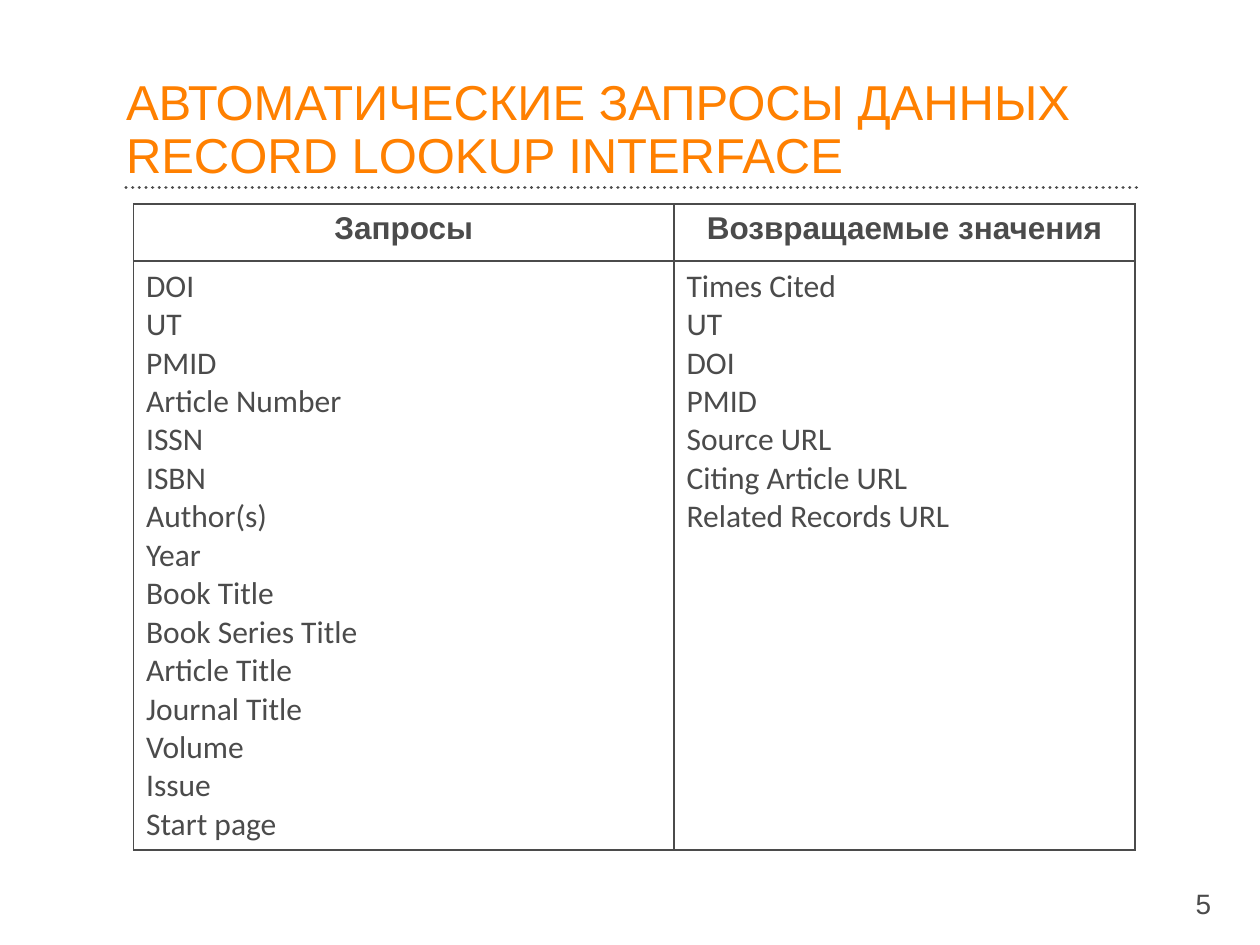
import dataclasses

import lxml.etree
import pptx
import pptx.dml.color
import pptx.enum.dml
import pptx.enum.shapes
import pptx.enum.text
import pptx.oxml.ns
import pptx.util

Inches = pptx.util.Inches
Pt = pptx.util.Pt
Align = pptx.enum.text.PP_ALIGN
qn = pptx.oxml.ns.qn

COLORS = {"title": "FF8000", "text": "4B4B4B", "cell": "FFFFFF"}
ROW_HEIGHTS = (0.45, 4.6)


@dataclasses.dataclass
class Column:
    heading: str
    width: float
    items: list[str]


COLUMNS = [
    Column("Запросы", 4.29, [
        "DOI", "UT", "PMID", "Article Number", "ISSN", "ISBN", "Author(s)",
        "Year", "Book Title", "Book Series Title", "Article Title",
        "Journal Title", "Volume", "Issue", "Start page",
    ]),
    Column("Возвращаемые значения", 3.66, [
        "Times Cited", "UT", "DOI", "PMID", "Source URL",
        "Citing Article URL", "Related Records URL",
    ]),
]


def color(name: str) -> pptx.dml.color.RGBColor:
    return pptx.dml.color.RGBColor.from_string(COLORS[name])


def write_lines(frame, lines: list[str], size: float, font: str = "Arial",
                ink: str = "text", bold: bool = False, align=Align.LEFT) -> None:
    for index, line in enumerate(lines):
        para = frame.paragraphs[0] if index == 0 else frame.add_paragraph()
        para.alignment = align
        span = para.add_run()
        span.text = line
        span.font.name = font
        span.font.size = Pt(size)
        span.font.bold = bold
        span.font.color.rgb = color(ink)


def style_cell(cell) -> None:
    properties = cell._tc.get_or_add_tcPr()
    for side in ("a:lnL", "a:lnR", "a:lnT", "a:lnB"):
        border = lxml.etree.SubElement(properties, qn(side), w=str(Pt(1)))
        fill = lxml.etree.SubElement(border, qn("a:solidFill"))
        lxml.etree.SubElement(fill, qn("a:srgbClr"), val=COLORS["text"])
    cell.fill.solid()
    cell.fill.fore_color.rgb = color("cell")


def add_title(page) -> None:
    title = page.shapes.title
    title.left, title.top = Inches(1), Inches(0.55)
    title.width, title.height = Inches(8.06), Inches(0.91)
    frame = title.text_frame
    frame.margin_left = frame.margin_right = 0
    frame.margin_top = frame.margin_bottom = 0
    frame.word_wrap = True
    frame.auto_size = pptx.enum.text.MSO_AUTO_SIZE.NONE
    frame.vertical_anchor = pptx.enum.text.MSO_ANCHOR.BOTTOM
    write_lines(frame, ["АВТОМАТИЧЕСКИЕ ЗАПРОСЫ ДАННЫХ RECORD LOOKUP INTERFACE"],
                28, ink="title")
    frame.paragraphs[0].line_spacing = 0.9


def add_title_rule(page) -> None:
    rule = page.shapes.add_connector(
        pptx.enum.shapes.MSO_CONNECTOR.STRAIGHT,
        Inches(1), Inches(1.49), Inches(9.06), Inches(1.49))
    rule.line.color.rgb = color("text")
    rule.line.width = Pt(1.9)
    rule.line.dash_style = pptx.enum.dml.MSO_LINE.ROUND_DOT
    properties = rule._element.spPr
    properties.find(qn("a:ln")).set("cap", "rnd")
    lxml.etree.SubElement(properties, qn("a:effectLst"))


def add_fields_table(page) -> None:
    table = page.shapes.add_table(
        len(ROW_HEIGHTS), len(COLUMNS), Inches(1.06), Inches(1.62),
        Inches(sum(column.width for column in COLUMNS)),
        Inches(sum(ROW_HEIGHTS))).table
    for row, height in zip(table.rows, ROW_HEIGHTS):
        row.height = Inches(height)
    for index, column in enumerate(COLUMNS):
        table.columns[index].width = Inches(column.width)
        heading, body = table.cell(0, index), table.cell(1, index)
        style_cell(heading)
        style_cell(body)
        write_lines(heading.text_frame, [column.heading], 18,
                    bold=True, align=Align.CENTER)
        write_lines(body.text_frame, column.items, 18, font="Calibri")


def add_page_number(page) -> None:
    box = page.shapes.add_textbox(Inches(9.21), Inches(6.99),
                                  Inches(0.5), Inches(0.25))
    box.text_frame.word_wrap = True
    write_lines(box.text_frame, ["5"], 16, align=Align.RIGHT)


def main() -> None:
    deck = pptx.Presentation()
    deck.slide_width, deck.slide_height = Inches(10), Inches(7.5)
    page = deck.slides.add_slide(deck.slide_layouts.get_by_name("Title Only"))
    add_title_rule(page)
    add_title(page)
    add_fields_table(page)
    add_page_number(page)
    deck.save("out.pptx")


if __name__ == "__main__":
    main()
